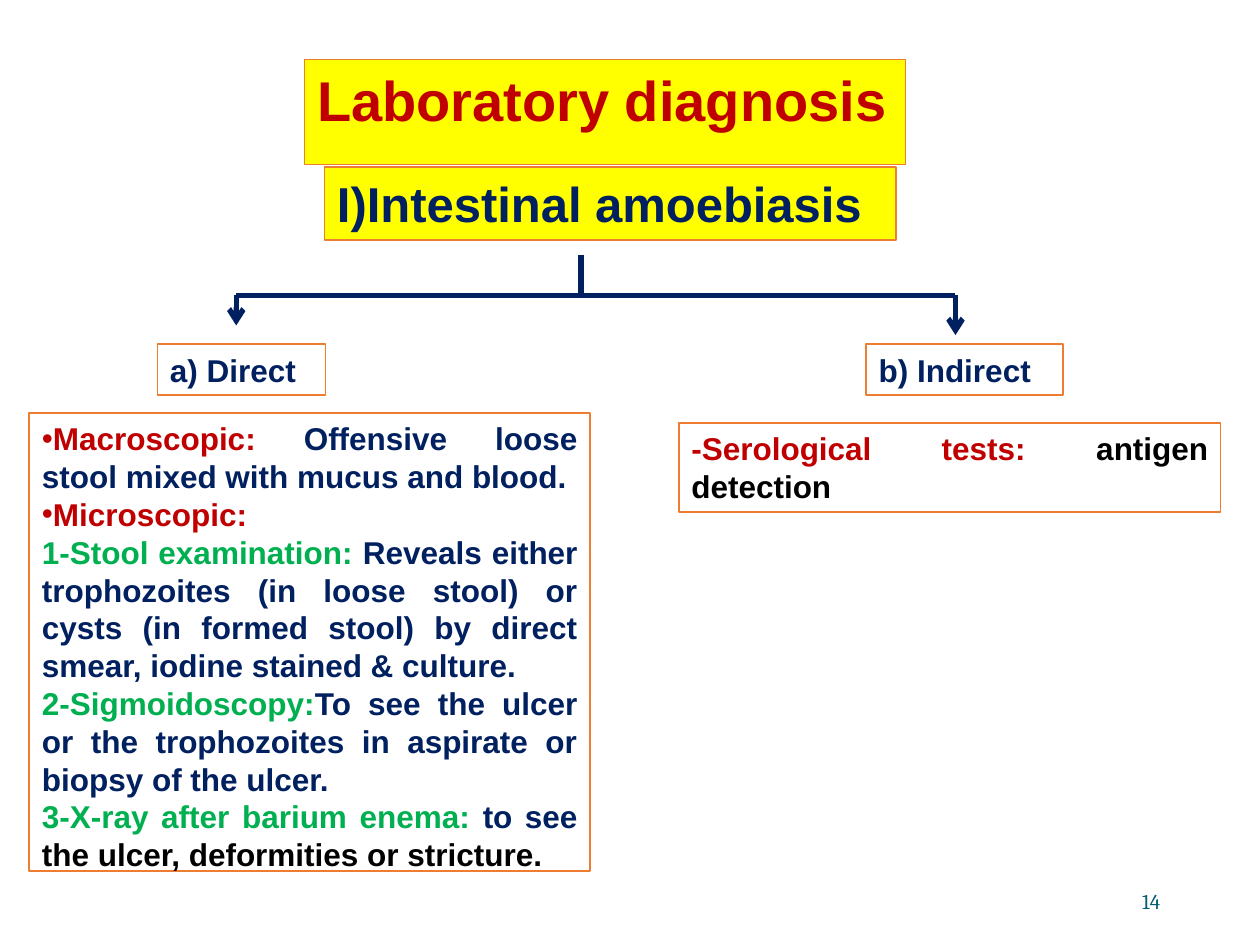
from dataclasses import dataclass

from lxml.etree import SubElement
from pptx import Presentation
from pptx.dml.color import RGBColor as RGB
from pptx.enum.shapes import MSO_CONNECTOR as CONNECTOR, MSO_SHAPE as SHAPE
from pptx.enum.text import MSO_ANCHOR as ANCHOR, MSO_AUTO_SIZE as FIT, PP_ALIGN as ALIGN
from pptx.oxml.ns import qn
from pptx.util import Pt


@dataclass(frozen=True)
class Theme:
    font: str = "Arial"
    number_font: str = "Cambria"
    title_size: int = 32
    subtitle_size: int = 28
    body_size: int = 18
    number_size: int = 12
    red: RGB = RGB(0xC0, 0x00, 0x00)
    navy: RGB = RGB(0x00, 0x20, 0x60)
    green: RGB = RGB(0x00, 0xB0, 0x50)
    black: RGB = RGB(0x00, 0x00, 0x00)
    teal: RGB = RGB(0x04, 0x5C, 0x75)
    yellow: RGB = RGB(0xFF, 0xFF, 0x00)
    white: RGB = RGB(0xFF, 0xFF, 0xFF)
    orange: RGB = RGB(0xED, 0x7D, 0x31)


THEME = Theme()

# Each paragraph: bullet or None, then its (text, colour) runs
DIRECT_METHODS = [
    ("•", [("Macroscopic:", THEME.red),
           (" Offensive loose stool mixed with mucus and blood.", THEME.navy)]),
    ("•", [("Microscopic:", THEME.red)]),
    (None, [("1-Stool examination: ", THEME.green),
            ("Reveals either trophozoites (in loose stool) or cysts (in formed "
             "stool) by direct smear, iodine stained & culture.", THEME.navy)]),
    (None, [("2-Sigmoidoscopy:", THEME.green),
            ("To see the ulcer or the trophozoites in aspirate or biopsy of "
             "the ulcer. ", THEME.navy)]),
    (None, [("3-X-ray after barium enema: ", THEME.green), ("to see ", THEME.navy),
            ("the ulcer, deformities or stricture.", THEME.black)]),
]
INDIRECT_METHODS = [
    (None, [("-Serological tests: ", THEME.red), ("antigen detection", THEME.black)]),
]


def place(shape, box):
    shape.left, shape.top, shape.width, shape.height = map(Pt, box)


def add_run(paragraph, text, size, color, font=THEME.font, bold=True):
    run = paragraph.add_run()
    run.text = text
    run.font.name, run.font.size, run.font.bold = font, Pt(size), bold
    run.font.color.rgb = color


def set_bullet(paragraph, bullet):
    properties = paragraph._p.get_or_add_pPr()
    properties.set("marL", "0")
    properties.set("indent", "0")
    if bullet:
        SubElement(properties, qn("a:buChar")).set("char", bullet)
    else:
        SubElement(properties, qn("a:buNone"))


def fill_panel(shape, box, paragraphs, size, fill=THEME.white, align=ALIGN.LEFT):
    """Turn a shape or placeholder into an outlined text panel."""
    place(shape, box)
    shape.fill.solid()
    shape.fill.fore_color.rgb = fill
    shape.line.color.rgb = THEME.orange
    shape.line.width = Pt(1)
    frame = shape.text_frame
    frame.word_wrap, frame.auto_size = True, FIT.SHAPE_TO_FIT_TEXT
    frame.vertical_anchor = ANCHOR.TOP
    for index, (bullet, runs) in enumerate(paragraphs):
        paragraph = frame.add_paragraph() if index else frame.paragraphs[0]
        paragraph.alignment = align
        paragraph.space_before = Pt(0)
        set_bullet(paragraph, bullet)
        for text, color in runs:
            add_run(paragraph, text, size, color)


def add_panel(slide, box, paragraphs, size, **style):
    shape = slide.shapes.add_shape(SHAPE.RECTANGLE, *map(Pt, box))
    shape.shadow.inherit = False
    fill_panel(shape, box, paragraphs, size, **style)


def add_line(slide, start, end, arrow=False):
    line = slide.shapes.add_connector(CONNECTOR.STRAIGHT, *map(Pt, start + end))
    line.line.color.rgb = THEME.navy
    line.line.width = Pt(3)
    if arrow:
        SubElement(line.line._get_or_add_ln(), qn("a:tailEnd")).set("type", "arrow")
    SubElement(line._element.spPr, qn("a:effectLst"))


def add_headings(slide, title_box, subtitle_box):
    fill_panel(slide.shapes.title, title_box,
               [(None, [("Laboratory diagnosis", THEME.red)])],
               THEME.title_size, fill=THEME.yellow)
    add_panel(slide, subtitle_box, [(None, [("I)Intestinal amoebiasis", THEME.navy)])],
              THEME.subtitle_size, fill=THEME.yellow)


def add_fork(slide, box, trunk_x, bar_y, left_drop):
    """Trunk, crossbar and two arrows; the left arrow ends at left_drop."""
    left, top, width, height = box
    right = left + width
    add_line(slide, (trunk_x, top), (trunk_x, bar_y))
    add_line(slide, (left, bar_y), (right, bar_y))
    add_line(slide, (right, bar_y), (right, top + height), arrow=True)
    add_line(slide, (left, bar_y), (left, left_drop), arrow=True)


def add_branch(slide, label, label_box, methods, methods_box, placeholder=None):
    add_panel(slide, label_box, [(None, [(label, THEME.navy)])], THEME.body_size)
    if placeholder is not None:
        fill_panel(placeholder, methods_box, methods, THEME.body_size, align=ALIGN.JUSTIFY)
    else:
        add_panel(slide, methods_box, methods, THEME.body_size, align=ALIGN.JUSTIFY)


def add_page_number(slide, box, number):
    frame = slide.shapes.add_textbox(*map(Pt, box)).text_frame
    frame.word_wrap, frame.vertical_anchor = True, ANCHOR.MIDDLE
    paragraph = frame.paragraphs[0]
    paragraph.alignment = ALIGN.RIGHT
    add_run(paragraph, number, THEME.number_size, THEME.teal,
            font=THEME.number_font, bold=False)


def main():
    presentation = Presentation()
    presentation.slide_width, presentation.slide_height = Pt(720), Pt(540)
    slide = presentation.slides.add_slide(presentation.slide_layouts[1])

    add_headings(slide, (174, 34, 343.5, 46), (185.5, 95.5, 326.5, 41.5))
    add_fork(slide, (135, 146, 411, 45.5), trunk_x=332, bar_y=168.75, left_drop=186)
    add_branch(slide, "a) Direct", (90, 196.75, 96, 29), DIRECT_METHODS,
               (16.75, 236, 320.5, 269), placeholder=slide.placeholders[1])
    add_branch(slide, "b) Indirect", (495, 196.75, 112.5, 29), INDIRECT_METHODS,
               (388, 241.75, 309.5, 51))
    add_page_number(slide, (508, 500.5, 162, 29), "14")

    presentation.save("out.pptx")


if __name__ == "__main__":
    main()
